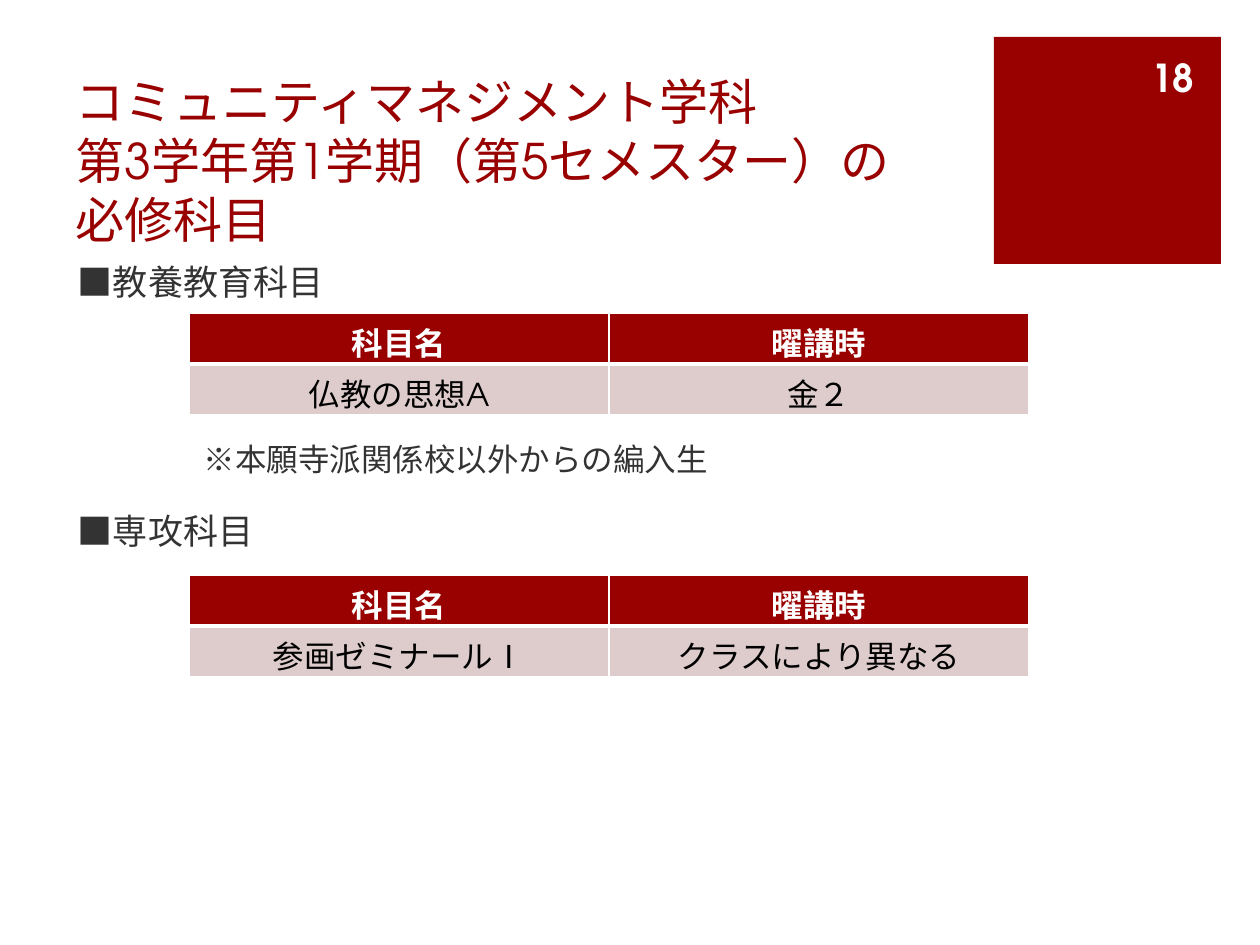
from lxml import etree
from pptx import Presentation
from pptx.dml.color import RGBColor
from pptx.enum.shapes import MSO_SHAPE
from pptx.enum.text import MSO_ANCHOR, PP_ALIGN
from pptx.oxml.ns import qn
from pptx.util import Emu, Pt

RECTANGLE = MSO_SHAPE.RECTANGLE
MIDDLE, BOTTOM = MSO_ANCHOR.MIDDLE, MSO_ANCHOR.BOTTOM
LEFT, CENTER, RIGHT = PP_ALIGN.LEFT, PP_ALIGN.CENTER, PP_ALIGN.RIGHT
PIXELS_PER_INCH = 126
RED, WHITE, BLACK, GRAY, PINK = "990000", "FFFFFF", "000000", "333333", "DECCCC"


def px(value):
    return Emu(round(value * 914400 / PIXELS_PER_INCH))


def color(value):
    return RGBColor.from_string(value)


class SlideBuilder:
    font_name = "TeX Gyre Adventor"

    def __init__(self, slide):
        self.slide = slide

    def set_values(self, target, values):
        for name, value in values.items():
            setattr(target, name, value)

    def format_paragraph(self, paragraph, size, hex_color, alignment=LEFT, bold=False):
        paragraph.alignment = alignment
        self.set_values(paragraph.font, {"name": self.font_name, "size": Pt(size), "bold": bold})
        paragraph.font.color.rgb = color(hex_color)

    def title(self, text, left, top, width, height):
        shape = self.slide.shapes.title
        self.set_values(shape, {"left": px(left), "top": px(top),
                                "width": px(width), "height": px(height)})
        frame = shape.text_frame
        self.set_values(frame, {"text": text, "word_wrap": True, "vertical_anchor": BOTTOM,
                                "margin_bottom": px(3)})
        paragraph = frame.paragraphs[0]
        paragraph.line_spacing = Pt(33.5)
        self.format_paragraph(paragraph, 28, RED)

    def rectangle(self, left, top, width, height, fill):
        shape = self.slide.shapes.add_shape(RECTANGLE, px(left), px(top), px(width), px(height))
        shape.shadow.inherit = False
        shape.fill.solid()
        shape.fill.fore_color.rgb = color(fill)
        shape.line.fill.background()

    def text(self, text, left, top, width, height, **style):
        shape = self.slide.shapes.add_textbox(px(left), px(top), px(width), px(height))
        frame = shape.text_frame
        self.set_values(frame, {"text": text, "word_wrap": True, "vertical_anchor": MIDDLE,
                                "margin_left": 0, "margin_right": 0,
                                "margin_top": 0, "margin_bottom": 0})
        self.format_paragraph(frame.paragraphs[0], **style)

    def borders(self, cell, widths):
        properties = cell._tc.get_or_add_tcPr()
        for index, (tag, width) in enumerate(widths.items()):
            line = etree.Element(qn(f"a:{tag}"), w=str(Pt(width)))
            fill = etree.SubElement(line, qn("a:solidFill"))
            etree.SubElement(fill, qn("a:srgbClr"), val=WHITE)
            properties.insert(index, line)

    def table(self, rows, left, top, width, height):
        shape = self.slide.shapes.add_table(len(rows), len(rows[0]), px(left), px(top),
                                            px(width), px(height))
        for row_index, row in enumerate(rows):
            header = row_index == 0
            for column_index, text in enumerate(row):
                cell = shape.table.cell(row_index, column_index)
                cell.text = text
                cell.fill.solid()
                cell.fill.fore_color.rgb = color(RED if header else PINK)
                self.format_paragraph(cell.text_frame.paragraphs[0], 18,
                                      WHITE if header else BLACK, CENTER, header)
                self.borders(cell, {"lnL": 1, "lnR": 1, "lnT": 1 if header else 3,
                                    "lnB": 3 if header else 1})


def main():
    presentation = Presentation()
    presentation.slide_width, presentation.slide_height = px(1260), px(945)
    builder = SlideBuilder(presentation.slides.add_slide(presentation.slide_layouts[5]))
    builder.rectangle(994, 37, 227, 227, RED)
    builder.title("コミュニティマネジメント学科\v第3学年第1学期（第5セメスター）の必修科目",
                  63, 66, 880, 185)
    builder.text("18", 1138, 52, 56, 50, size=22, hex_color=WHITE, alignment=RIGHT, bold=True)
    builder.text("■教養教育科目", 78, 256, 880, 50, size=20, hex_color=GRAY)
    builder.text("※本願寺派関係校以外からの編入生", 204, 434, 754, 50, size=18, hex_color=GRAY)
    builder.text("■専攻科目", 78, 506, 880, 50, size=20, hex_color=GRAY)
    header = ("科目名", "曜講時")
    for top, course in ((313, ("仏教の思想A", "金２")),
                        (575, ("参画ゼミナールⅠ", "クラスにより異なる"))):
        builder.table((header, course), 189, top, 840, 102)
    presentation.save("out.pptx")


if __name__ == "__main__":
    main()
